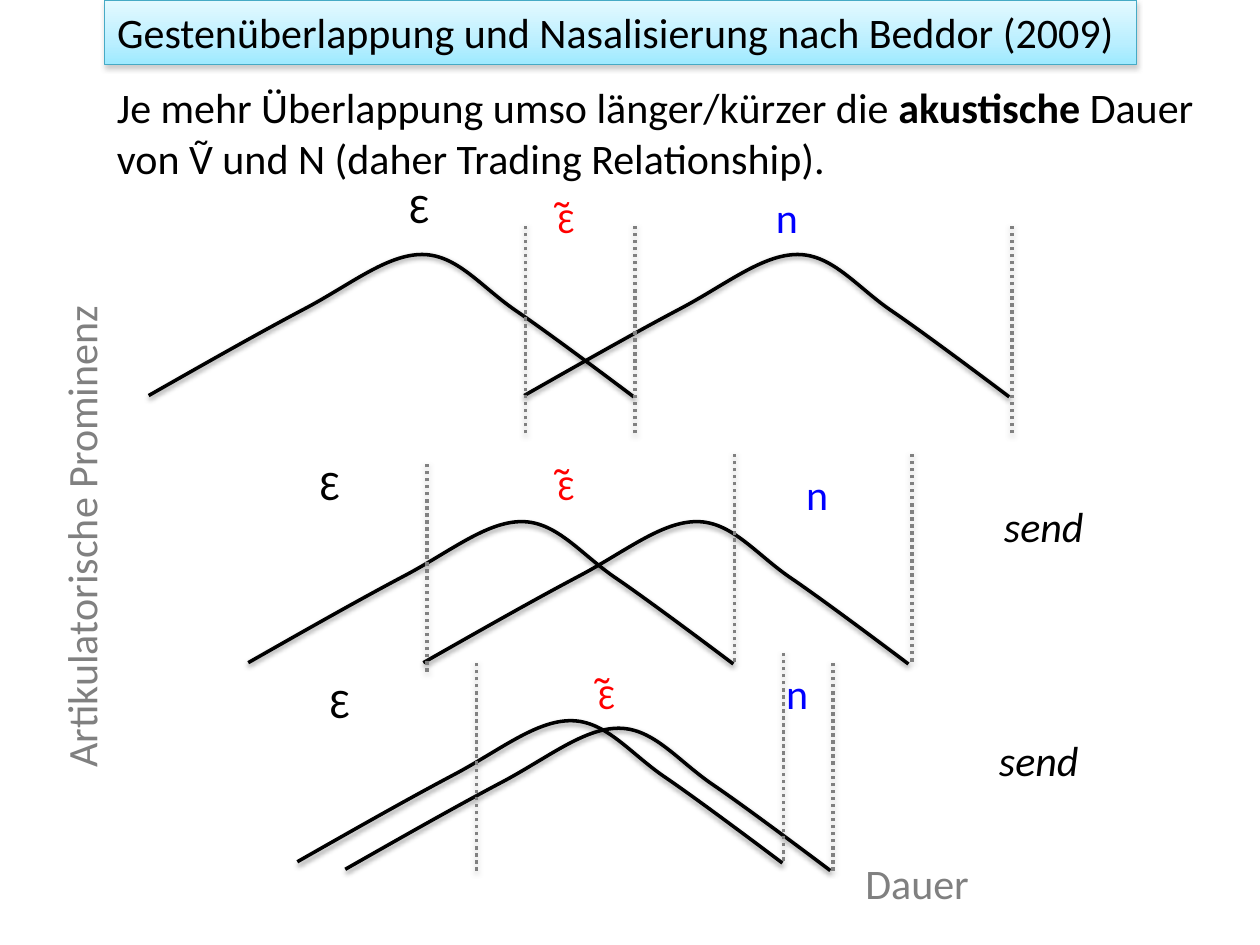
from copy import deepcopy

from pptx import Presentation
from pptx import util as u
from pptx.dml.color import RGBColor
from pptx.enum import dml, shapes, text
from pptx.oxml import ns, parse_xml

BLACK = RGBColor(0, 0, 0)
GREY = RGBColor(0x80, 0x80, 0x80)
RED = RGBColor(0xFF, 0, 0)
BLUE = RGBColor(0, 0, 0xFF)
TEAL = RGBColor(0x46, 0xAA, 0xC5)
TITLE_STOPS = [
    (0, RGBColor(0xE4, 0xF9, 0xFF)),
    (0.65, RGBColor(0xBB, 0xEF, 0xFF)),
    (1, RGBColor(0x9E, 0xEA, 0xFF)),
]

WIDTH, HEIGHT = u.Inches(10), u.Inches(7.5)
COLUMN, ROW = WIDTH / 100, HEIGHT / 75
CURVE_WIDTH, MARK_ROWS = 38.5, 16.6
CURVE = [
    (0, 11.2), (4.4, 8.7), (8.8, 6.2), (12.4, 4.3), (16, 2.4), (18.9, 0), (21.7, 0),
    (24.5, 0), (26.4, 2.6), (29.2, 4.5), (32, 6.4), (38.5, 11.3), (38.5, 11.3),
]
PANELS = [
    dict(box=(11.8, 20.2, 68.3), drop=0, oral=(19.7, -6.3), nasal=(31.5, -5.5),
         consonant=(48.8, -5.5), marks=[(29.9, -2.4), (38.6, -2.4), (68.5, -2.4)]),
    dict(box=(19.7, 41.4, 52.4), drop=0, oral=(4.7, -5.5), nasal=(23.6, -5.5),
         consonant=(43.3, -4.7), marks=[(14.2, -4.7), (38.6, -5.5), (52.7, -5.5)],
         word=(59, -2.2)),
    dict(box=(23.6, 57.2, 42.3), drop=0.6, oral=(1.6, -4), nasal=(22.9, -4.7),
         consonant=(37.8, -4.7), marks=[(14.2, -4.7), (38.6, -5.5), (42.5, -4.7)],
         word=(54.7, 0.6)),
]


def spot(column, row):
    """Turn a grid position into slide lengths."""
    return u.Emu(round(column * COLUMN)), u.Emu(round(row * ROW))


def add_shadow(shape, color):
    """Give a shape a soft shadow that falls straight down."""
    shape.element.spPr.append(parse_xml(
        f'<a:effectLst {ns.nsdecls("a")}>'
        '<a:outerShdw blurRad="40000" dist="20000" dir="5400000" rotWithShape="0">'
        f'<a:srgbClr val="{color}"><a:alpha val="38000"/></a:srgbClr>'
        '</a:outerShdw></a:effectLst>'))


def set_font(font, color, size=24):
    """Set typeface, size and colour."""
    font.name = "Calibri"
    font.size = u.Pt(size)
    font.color.rgb = color


def add_label(page, box, pieces, color=BLACK):
    """Place one paragraph and return its box and the paragraph."""
    label = page.shapes.add_textbox(*spot(*box[:2]), *spot(*box[2:]))
    label.text_frame.word_wrap = True
    para = label.text_frame.paragraphs[0]
    set_font(para.font, color)
    for piece in pieces:
        para.add_run().text = piece
    return label, para


def add_curve(page, left, top):
    """Draw one bell-shaped gesture with cubic segments."""
    start, *points = [spot(left + column, top + row) for column, row in CURVE]
    builder = page.shapes.build_freeform(*start)
    builder.add_line_segments(points, close=False)
    curve = builder.convert_to_shape()
    outline = next(curve.element.iter(ns.qn("a:path")))
    lines = outline.findall(ns.qn("a:lnTo"))
    for first in range(0, len(lines), 3):
        cubic = parse_xml(f'<a:cubicBezTo {ns.nsdecls("a")}/>')
        for line in lines[first:first + 3]:
            cubic.append(line[0])
            outline.remove(line)
        outline.append(cubic)
    curve.fill.background()
    curve.line.color.rgb = BLACK
    curve.line.width = u.Pt(2)
    add_shadow(curve, BLACK)


def add_mark(page, column, row):
    """Draw one dotted segment boundary."""
    mark = page.shapes.add_connector(
        shapes.MSO_CONNECTOR.STRAIGHT, *spot(column, row + MARK_ROWS), *spot(column, row))
    mark.line.color.rgb = GREY
    mark.line.width = u.Pt(2)
    mark.line.dash_style = dml.MSO_LINE.ROUND_DOT
    add_shadow(mark, GREY)


def add_panel(page, box, drop, oral, nasal, consonant, marks, word=None):
    """Draw two overlapping gestures with their boundaries and labels."""
    left, top, width = box

    def inside(place, columns=5.5):
        """Return a label box placed relative to the panel."""
        return left + place[0], top + place[1], columns, 5

    add_curve(page, left, top)
    add_curve(page, left + width - CURVE_WIDTH, top + drop)
    for column, row in marks:
        add_mark(page, left + column, top + row)
    add_label(page, inside(oral), ["Ɛ"])
    vowel = add_label(page, inside(nasal), ["Ɛ", "̃"], RED)[1]
    vowel.runs[0].font.size = u.Pt(20)
    add_label(page, inside(consonant), ["n"], BLUE)
    if word:
        add_label(page, inside(word, 8.7), ["send"])[1].font.italic = True


def add_title(page, box):
    """Format the title as a shaded bar of fixed height."""
    title = page.shapes.title
    title.left, title.top = spot(*box[:2])
    title.width, title.height = spot(*box[2:])
    title.fill.gradient()
    title.fill.gradient_angle = 270
    first = next(title.element.iter(ns.qn("a:gs")))
    first.addnext(deepcopy(first))
    for stop, (position, color) in zip(title.fill.gradient_stops, TITLE_STOPS):
        stop.position = position
        stop.color.rgb = color
    title.line.color.rgb = TEAL
    title.line.width = u.Pt(0.75)
    add_shadow(title, GREY)
    frame = title.text_frame
    frame.text = "Gestenüberlappung und Nasalisierung nach Beddor (2009)"
    frame.word_wrap = True
    frame.auto_size = text.MSO_AUTO_SIZE.NONE
    frame.vertical_anchor = text.MSO_ANCHOR.TOP
    para = frame.paragraphs[0]
    para.alignment = text.PP_ALIGN.LEFT
    set_font(para.font, BLACK)


def add_statement(page, box):
    """Place the claim with its stressed word."""
    para = add_label(page, box, [
        "Je mehr Überlappung umso länger/kürzer die ", "akustische",
        " Dauer von Ṽ und N (daher Trading Relationship)."])[1]
    para.runs[1].font.bold = True


def add_axes(page, upright, level):
    """Name the vertical and horizontal axes."""
    add_label(page, upright, ["Artikulatorische Prominenz"], GREY)[0].rotation = 270
    add_label(page, level, ["Dauer"], GREY)


def main():
    """Build and save the slide."""
    deck = Presentation()
    deck.slide_width, deck.slide_height = WIDTH, HEIGHT
    page = deck.slides.add_slide(deck.slide_layouts.get_by_name("Title Only"))
    add_title(page, (8.3, 0, 81.9, 5.1))
    add_statement(page, (8.3, 6, 90.6, 9.1))
    for panel in PANELS:
        add_panel(page, **panel)
    add_axes(page, (-13.2, 39.7, 39.3, 5.1), (67.7, 67.6, 17.3, 5.1))
    deck.save("out.pptx")


if __name__ == "__main__":
    main()
